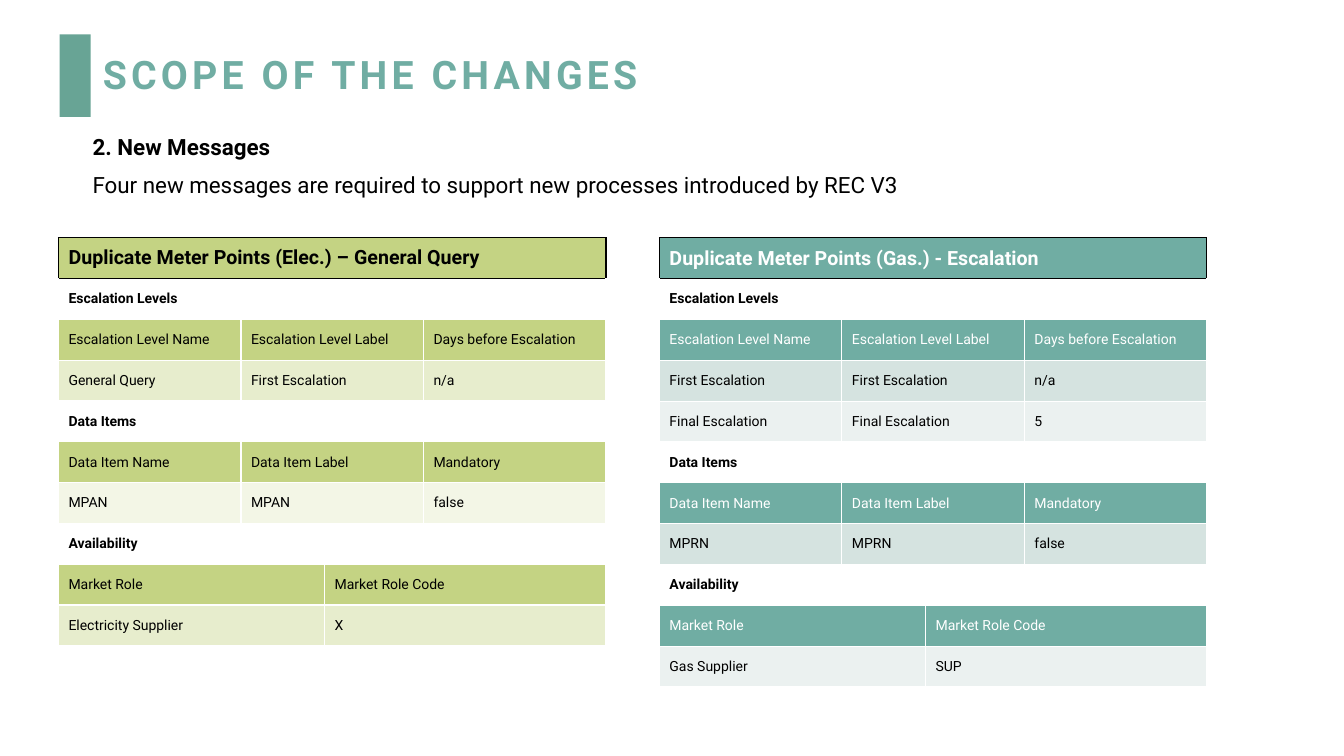
from lxml import etree
from pptx import Presentation
from pptx.dml.color import RGBColor
from pptx.enum.shapes import MSO_SHAPE
from pptx.enum.text import MSO_ANCHOR, PP_ALIGN
from pptx.oxml.ns import qn
from pptx.util import Inches, Pt

RECT = MSO_SHAPE.RECTANGLE
MIDDLE = MSO_ANCHOR.MIDDLE
LEFT = PP_ALIGN.LEFT

FONT = "Roboto"
BLACK, WHITE = "000000", "FFFFFF"
TEAL, BAR_TEAL = "70ADA3", "68A495"

TITLE = "SCOPE OF THE CHANGES"
INTRO = [
    ("2. New Messages", True),
    ("Four new messages are required to support new processes introduced by REC V3", False),
]

LEVEL_HEADS = ["Escalation Level Name", "Escalation Level Label", "Days before Escalation"]
ITEM_HEADS = ["Data Item Name", "Data Item Label", "Mandatory"]
ROLE_HEADS = ["Market Role", "Market Role Code"]

# Row kinds: title, section, head, dark and light (the two body bands)
MESSAGES = [
    {
        "left": 6.54, "height": 4.46, "head_text": WHITE,
        "fills": {"title": TEAL, "head": TEAL, "dark": "D5E3E0", "light": "EBF1F0"},
        "rows": [
            ("title", ["Duplicate Meter Points (Gas.) - Escalation"]),
            ("section", ["Escalation Levels"]),
            ("head", LEVEL_HEADS),
            ("dark", ["First Escalation", "First Escalation", "n/a"]),
            ("light", ["Final Escalation", "Final Escalation", "5"]),
            ("section", ["Data Items"]),
            ("head", ITEM_HEADS),
            ("dark", ["MPRN", "MPRN", "false"]),
            ("section", ["Availability"]),
            ("head", ROLE_HEADS),
            ("light", ["Gas Supplier", "SUP"]),
        ],
    },
    {
        "left": 0.58, "height": 4.05, "head_text": BLACK,
        "fills": {"title": "C4D383", "head": "C4D383", "dark": "E7EDCD", "light": "F3F6E6"},
        "rows": [
            ("title", ["Duplicate Meter Points (Elec.) – General Query"]),
            ("section", ["Escalation Levels"]),
            ("head", LEVEL_HEADS),
            ("dark", ["General Query", "First Escalation", "n/a"]),
            ("section", ["Data Items"]),
            ("head", ITEM_HEADS),
            ("light", ["MPAN", "MPAN", "false"]),
            ("section", ["Availability"]),
            ("head", ROLE_HEADS),
            ("dark", ["Electricity Supplier", "X"]),
        ],
    },
]
TABLE_TOP, TABLE_WIDTH = 2.36, 5.42
COL_WIDTHS = [1.81, 0.83, 0.98, 1.81]
# First and last grid column of each cell, by number of texts in the row
SPANS = {1: [(0, 3)], 2: [(0, 1), (2, 3)], 3: [(0, 0), (1, 2), (3, 3)]}


def rgb(color):
    return RGBColor.from_string(color)


def write(p, text, size, color, bold):
    r = p.add_run()
    r.text = text
    r.font.color.rgb = rgb(color)
    for name, value in {"name": FONT, "size": Pt(size), "bold": bold}.items():
        setattr(r.font, name, value)
    return r


def set_borders(cell, color, top):
    tcPr = cell._tc.get_or_add_tcPr()
    for side, line_color in (("L", color), ("R", color), ("T", top), ("B", color)):
        ln = etree.SubElement(tcPr, qn(f"a:ln{side}"), w=str(Pt(1)))
        fill = etree.SubElement(ln, qn("a:solidFill"))
        etree.SubElement(fill, qn("a:srgbClr"), val=line_color)


def add_message_table(s, message):
    rows, fills = message["rows"], message["fills"]
    table = s.shapes.add_table(
        len(rows), len(COL_WIDTHS), Inches(message["left"]), Inches(TABLE_TOP),
        Inches(TABLE_WIDTH), Inches(message["height"])).table
    table.first_row = table.horz_banding = False
    for column, width in zip(table.columns, COL_WIDTHS):
        column.width = Inches(width)

    for i, (kind, texts) in enumerate(rows):
        line = BLACK if kind == "title" else WHITE
        top = BLACK if i <= 1 else WHITE
        for cell in table.rows[i].cells:
            set_borders(cell, line, top)
            if kind in fills:
                cell.fill.solid()
                cell.fill.fore_color.rgb = rgb(fills[kind])
            else:
                cell.fill.background()
        for text, (first, last) in zip(texts, SPANS[len(texts)]):
            cell = table.cell(i, first)
            if last > first:
                cell.merge(table.cell(i, last))
            cell.vertical_anchor = MIDDLE
            write(cell.text_frame.paragraphs[0], text,
                  14 if kind == "title" else 10,
                  message["head_text"] if kind in ("title", "head") else BLACK,
                  kind in ("title", "section"))


prs = Presentation()
prs.slide_width, prs.slide_height = Inches(13.33), Inches(7.5)
s = prs.slides.add_slide(prs.slide_layouts[5])

bar = s.shapes.add_shape(RECT, Inches(0.59), Inches(0.34), Inches(0.31), Inches(0.82))
bar.shadow.inherit = False
bar.fill.solid()
bar.fill.fore_color.rgb = rgb(BAR_TEAL)
bar.line.fill.background()

title = s.shapes.title
title.left, title.top, title.width, title.height = map(Inches, (0.92, 0.4, 10.15, 0.72))
title.text_frame.vertical_anchor = MIDDLE
p = title.text_frame.paragraphs[0]
p.alignment, p.line_spacing = LEFT, 0.9
r = write(p, TITLE, 28, TEAL, True)
r.font._element.set("spc", "300")

intro = s.shapes.add_textbox(Inches(0.82), Inches(1.3), Inches(10.99), Inches(1.16))
tf = intro.text_frame
tf.word_wrap = True
for i, (text, bold) in enumerate(INTRO):
    p = tf.add_paragraph() if i else tf.paragraphs[0]
    p.line_spacing = 0.9
    p.space_before = Pt(10 if i else 0)
    write(p, text, 16, BLACK, bold)

for message in MESSAGES:
    add_message_table(s, message)

prs.save("out.pptx")
